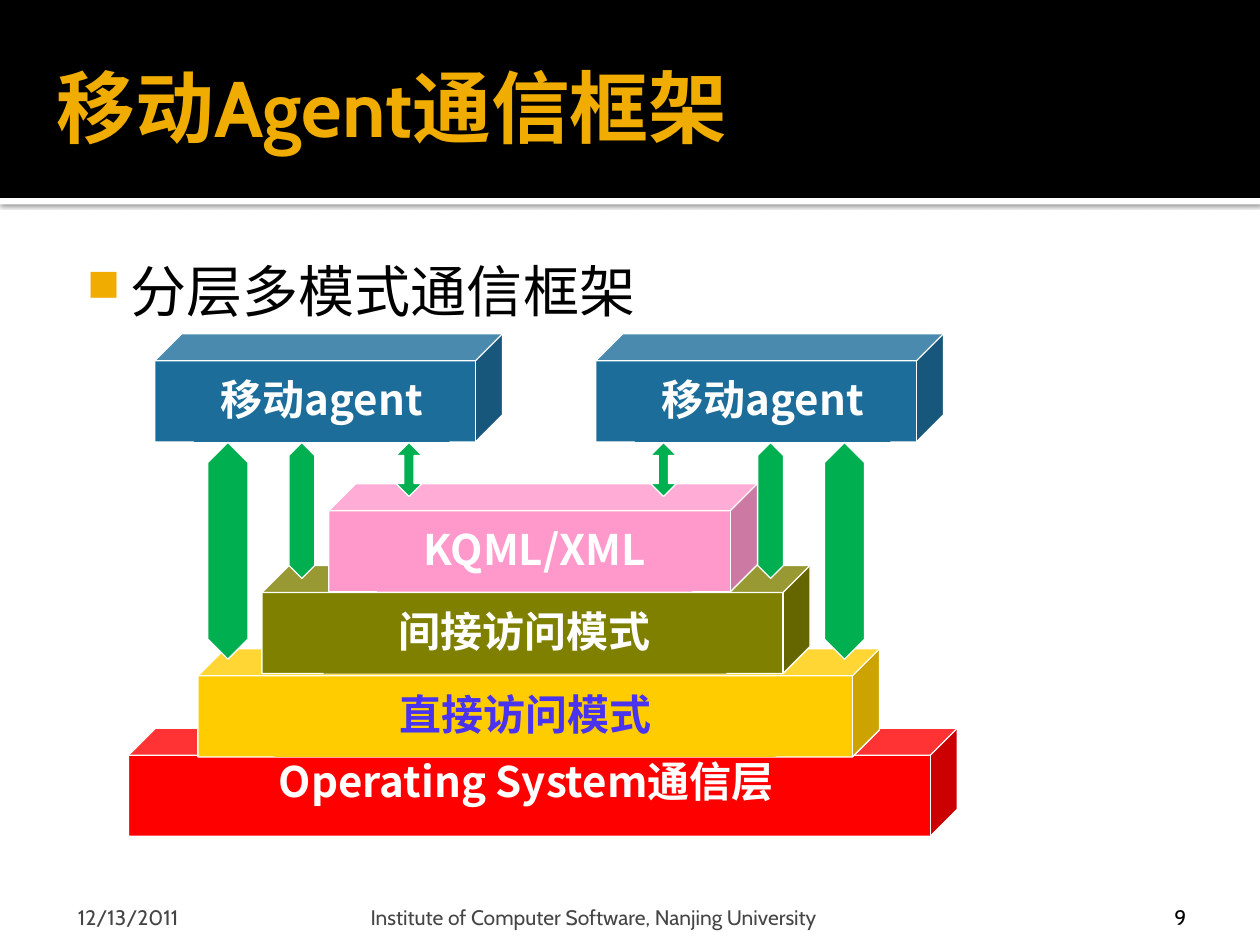
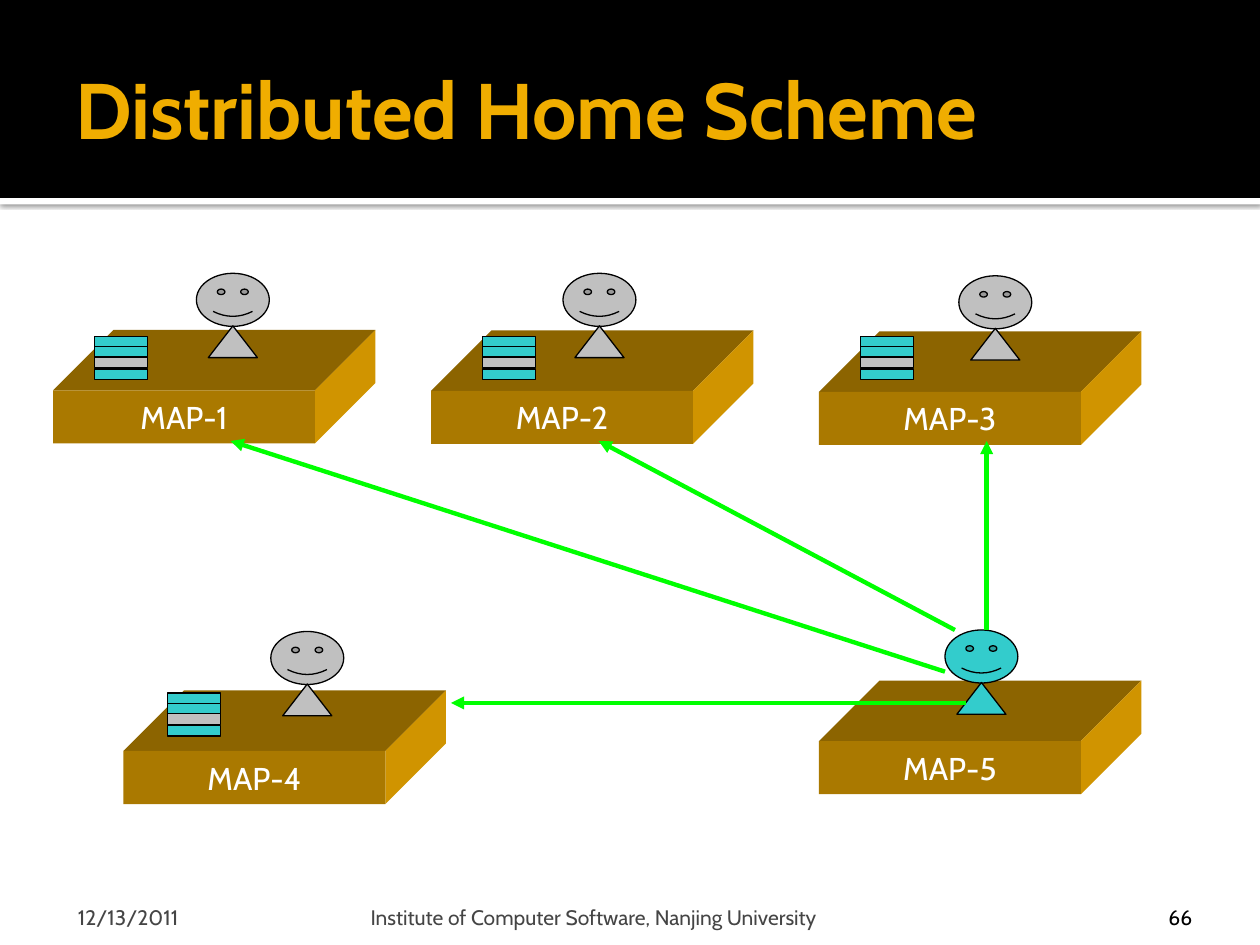
"""Build two slides: a layered agent communication framework and a distributed home scheme."""
import lxml.etree
import pptx
import pptx.dml.color
import pptx.enum.shapes
import pptx.enum.text
import pptx.oxml.ns
import pptx.util

Cm = pptx.util.Cm
Pt = pptx.util.Pt
qn = pptx.oxml.ns.qn
SHAPE = pptx.enum.shapes.MSO_SHAPE
ALIGN = pptx.enum.text.PP_ALIGN
ANCHOR = pptx.enum.text.MSO_ANCHOR

COLORS = {
    "black": "000000", "white": "FFFFFF", "gold": "F0AD00", "footer": "454545",
    "red": "FF0000", "yellow": "FFCC00", "olive": "808000", "pink": "FF99CC",
    "blue": "1C6D9A", "violet": "4933EF", "green": "00B050", "lime": "00FF00",
    "gray": "C0C0C0", "teal": "33CCCC",
    "slab_front": "AA7900", "slab_top": "8C6400", "slab_side": "D09400",
}
LATIN, CJK = "Cabin", "Noto Sans CJK SC"


def rgb(name):
    return pptx.dml.color.RGBColor.from_string(COLORS[name])


def add_xml(parent, tag, **attrs):
    return lxml.etree.SubElement(parent, qn(tag), {k: str(v) for k, v in attrs.items()})


class Deck:
    def __init__(self):
        self.prs = pptx.Presentation()
        self.prs.slide_width, self.prs.slide_height = Cm(25.4), Cm(19.05)
        self.s = None

    def slide(self, title, title_box, number):
        self.s = self.prs.slides.add_slide(self.prs.slide_layouts[6])
        rule = self.shape(SHAPE.RECTANGLE, 0, 3.99, 25.4, 0.13, "white")
        effects = rule._element.spPr.find(qn("a:effectLst"))
        shadow = add_xml(effects, "a:outerShdw", blurRad=Pt(2.5), dist=Pt(0.8),
                         dir=5400000, algn="t", rotWithShape=0)
        color = add_xml(shadow, "a:srgbClr", val=COLORS["black"])
        add_xml(color, "a:alpha", val=60000)
        self.shape(SHAPE.RECTANGLE, 0, 0, 25.4, 3.99, "black")
        self.text(title, title_box, 45, "gold", (0.25, 0.13, 0.13, 0.13),
                  ANCHOR.MIDDLE, bold=True)
        for words, left, width, color, inset, align in (
            ("12/13/2011", 1.27, 5.92, "footer", 0.3, ALIGN.LEFT),
            ("Institute of Computer Software, Nanjing University",
             7.34, 15.29, "footer", 0.13, ALIGN.LEFT),
            (number, 22.78, 2.03, "black", 0.25, ALIGN.CENTER),
        ):
            right = inset if align == ALIGN.CENTER else 0.13
            self.text(words, (left, 17.98, width, 0.76), 12, color,
                      (inset, 0.13, right, 0), ANCHOR.BOTTOM, align)

    def paint(self, sp, fill, line=None):
        sp.shadow.inherit = False
        sp.fill.solid()
        sp.fill.fore_color.rgb = rgb(fill)
        if line:
            sp.line.color.rgb = rgb(line)
            sp.line.width = Pt(0.75)
        else:
            sp.line.fill.background()
        return sp

    def shape(self, kind, x, y, w, h, fill, line=None, adj=()):
        sp = self.s.shapes.add_shape(kind, Cm(x), Cm(y), Cm(w), Cm(h))
        for i, value in enumerate(adj):
            sp.adjustments[i] = value
        return self.paint(sp, fill, line)

    def polygon(self, points, fill):
        points = [(Cm(x), Cm(y)) for x, y in points]
        builder = self.s.shapes.build_freeform(*points[0])
        builder.add_line_segments(points[1:])
        return self.paint(builder.convert_to_shape(), fill)

    def label(self, sp, words, size, color, insets, anchor, align,
              font=LATIN, bold=False, wrap=True):
        tf = sp.text_frame
        tf.word_wrap = wrap
        tf.vertical_anchor = anchor
        tf.margin_left, tf.margin_top, tf.margin_right, tf.margin_bottom = map(Cm, insets)
        p = tf.paragraphs[0]
        p.alignment = align
        r = p.add_run()
        r.text = words
        r.font.size, r.font.bold, r.font.name = Pt(size), bold, font
        r.font.color.rgb = rgb(color)
        add_xml(r._r.get_or_add_rPr(), "a:ea", typeface=CJK)
        return p

    def text(self, words, box, size, color, insets, anchor=ANCHOR.TOP,
             align=ALIGN.LEFT, bold=False):
        sp = self.s.shapes.add_textbox(*map(Cm, box))
        return self.label(sp, words, size, color, insets, anchor, align, bold=bold)

    def bullet(self, words, box):
        p = self.text(words, box, 32, "black", (0.15, 0.25, 0.25, 0.13))
        pPr = p._p.get_or_add_pPr()
        pPr.set("marL", str(Cm(1.22)))
        pPr.set("indent", str(Cm(-0.89)))
        add_xml(add_xml(pPr, "a:buClr"), "a:srgbClr", val=COLORS["gold"])
        add_xml(pPr, "a:buSzPct", val=80000)
        add_xml(pPr, "a:buChar", char="■")

    def layer(self, words, x, y, w, fill, color="white", drop=0.81):
        self.shape(SHAPE.CUBE, x, y, w, 2.18, fill, "white", (0.25,))
        sp = self.shape(SHAPE.RECTANGLE, x + 0.1125 * w, y + drop, 0.735 * w, 1.37, fill)
        self.label(sp, words, 24, color, (0, 0, 0, 0), ANCHOR.TOP, ALIGN.CENTER, CJK, True)

    def slab(self, words, x, y):
        w, h, depth = 5.28, 1.07, 1.22
        right, back = x + w, y - depth
        self.polygon([(x, y), (x + depth, back), (right + depth, back), (right, y)], "slab_top")
        self.polygon([(right, y), (right + depth, back),
                      (right + depth, back + h), (right, y + h)], "slab_side")
        sp = self.shape(SHAPE.RECTANGLE, x, y, w, h, "slab_front")
        self.label(sp, words, 18, "white", (0.25, 0.13, 0.25, 0.13),
                   ANCHOR.MIDDLE, ALIGN.CENTER, wrap=False)

    def agent(self, x, y, fill):
        self.shape(SHAPE.SMILEY_FACE, x, y, 1.47, 1.07, fill, "black")
        self.shape(SHAPE.ISOSCELES_TRIANGLE, x + 0.24, y + 1.06, 0.99, 0.64, fill, "black")

    def stack(self, x, y):
        for dy, fill in ((0, "teal"), (0.21, "teal"), (0.42, "gray"), (0.66, "teal")):
            self.shape(SHAPE.RECTANGLE, x, y + dy, 1.07, 0.21, fill, "black")

    def arrow(self, start, end):
        line = self.s.shapes.add_connector(pptx.enum.shapes.MSO_CONNECTOR.STRAIGHT,
                                           *map(Cm, start + end))
        line.line.color.rgb = rgb("lime")
        line.line.width = Pt(2.5)
        spPr = line._element.spPr
        add_xml(spPr.find(qn("a:ln")), "a:tailEnd", type="triangle")
        add_xml(spPr, "a:effectLst")


def framework(deck):
    deck.slide("移动Agent通信框架", (0.89, 0.15, 24, 3.99), "9")
    deck.bullet("分层多模式通信框架", (1.27, 4.93, 22.86, 12.85))
    deck.layer("Operating System通信层", 2.59, 14.68, 16.71, "red", drop=0.56)
    deck.layer("直接访问模式", 3.99, 13.08, 13.74, "yellow", "violet")
    deck.layer("间接访问模式", 5.28, 11.4, 11.05, "olive")
    deck.layer("KQML/XML", 6.63, 9.75, 8.64, "pink")
    for x in (3.12, 12.01):
        deck.layer("移动agent", x, 6.73, 7.01, "blue")
    mirror = 21.62
    for x, w, h, head in ((4.19, 0.81, 4.37, 1.04), (5.82, 0.53, 2.74, 0.98),
                          (7.98, 0.53, 1.09, 0.39)):
        for left in (x, mirror - x - w):
            deck.shape(SHAPE.UP_DOWN_ARROW, left, 8.92, w, h, "green", "white", (0.5, head))


def home_scheme(deck):
    deck.slide("Distributed Home Scheme", (1.27, 0.43, 22.86, 3.48), "66")
    for i, (slab, agent, stack) in enumerate((
        ((1.07, 7.87), (3.96, 5.51), (1.9, 6.78)),
        ((8.69, 7.88), (11.35, 5.51), (9.73, 6.78)),
        ((16.51, 7.9), (19.33, 5.56), (17.35, 6.78)),
        ((2.49, 15.14), (5.46, 12.73), (3.38, 13.97)),
        ((16.51, 14.94), (19.05, 12.7), None),
    ), 1):
        deck.slab(f"MAP-{i}", *slab)
        deck.agent(*agent, "gray" if stack else "teal")
        if stack:
            deck.stack(*stack)
    for start, end in (((19.05, 13.54), (4.65, 8.89)), ((19.25, 12.7), (12.07, 8.89)),
                       ((19.89, 12.7), (19.89, 8.89)), ((19.48, 14.17), (9.09, 14.17))):
        deck.arrow(start, end)


def main():
    deck = Deck()
    framework(deck)
    home_scheme(deck)
    deck.prs.save("out.pptx")


if __name__ == "__main__":
    main()
